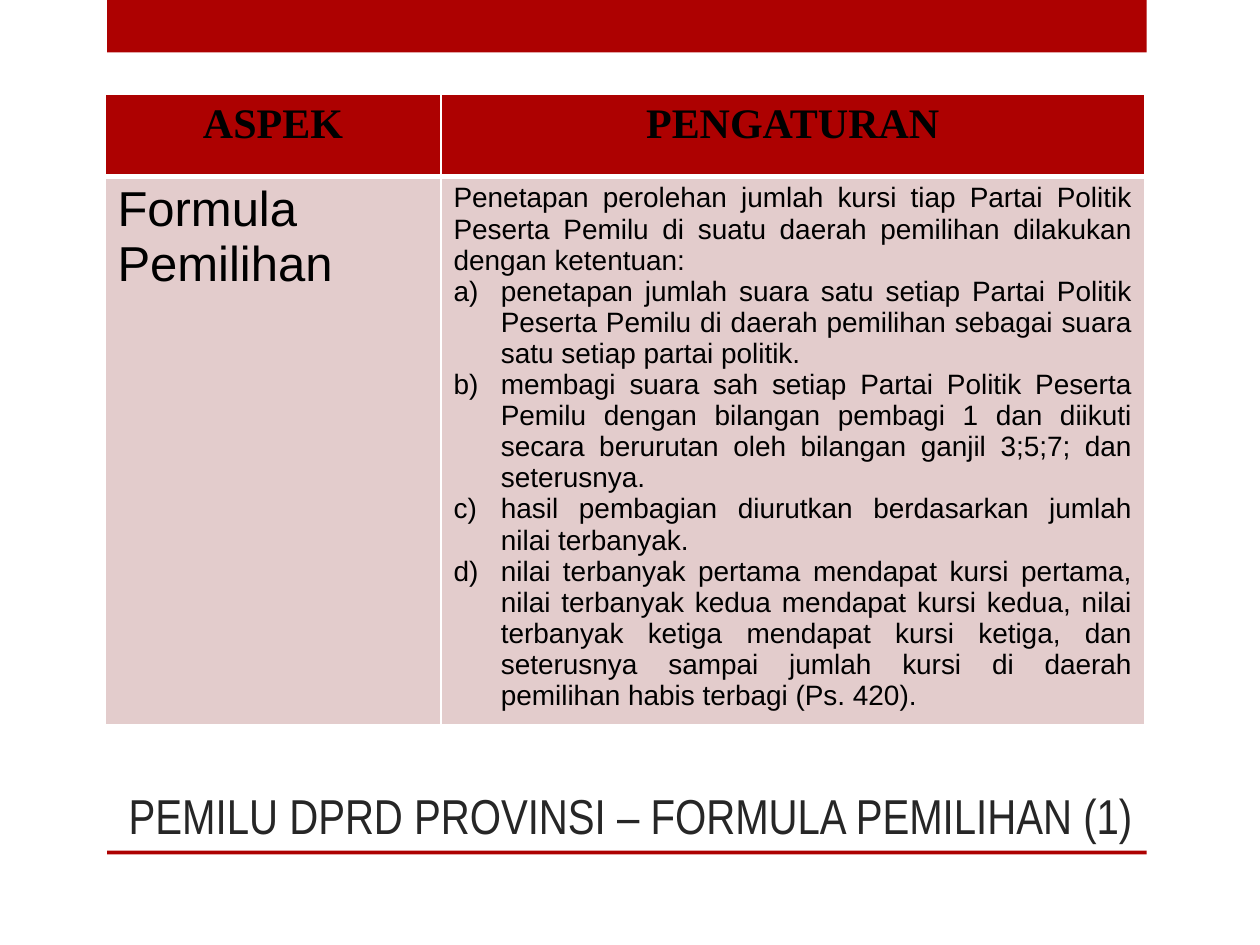
from dataclasses import dataclass

from pptx import Presentation
from pptx.dml.color import RGBColor as RGB
from pptx.enum.shapes import MSO_SHAPE as SHAPE
from pptx.enum.text import MSO_ANCHOR as ANCHOR, MSO_AUTO_SIZE as AUTOSIZE, PP_ALIGN as ALIGN
from pptx.oxml.xmlchemy import OxmlElement as Element
from pptx.util import Pt


@dataclass(frozen=True)
class Theme:
    red: str = "AD0101"
    pink: str = "E3CCCC"
    white: str = "FFFFFF"
    black: str = "000000"
    dark: str = "262626"
    title_size: int = 28
    header_size: int = 24
    aspect_size: int = 28
    body_size: int = 16
    title_font: str = "Arial Narrow"
    header_font: str = "Times New Roman"
    body_font: str = "Arial"


theme = Theme()


def write(p, text, size, font=theme.body_font, color=theme.black,
          bold=False, align=ALIGN.LEFT, bullet=None, indent=27):
    """Fill a paragraph with one formatted run, numbered if bullet is set."""
    p.alignment = align
    r = p.add_run()
    r.text = text
    r.font.size, r.font.name, r.font.bold = Pt(size), font, bold
    r.font.color.rgb = RGB.from_string(color)
    if bullet:
        pPr = p._p.get_or_add_pPr()
        pPr.set("marL", str(Pt(indent)))
        pPr.set("indent", str(-Pt(indent)))
        number = Element("a:buAutoNum")
        number.set("type", bullet)
        pPr.append(number)


def style_cell(cell, fill, borders):
    """Set the cell's fill and its white borders, given as side: width."""
    cell.fill.solid()
    cell.fill.fore_color.rgb = RGB.from_string(fill)
    tcPr = cell._tc.get_or_add_tcPr()
    for i, (side, width) in enumerate(borders.items()):
        ln, solid, clr = Element(f"a:ln{side}"), Element("a:solidFill"), Element("a:srgbClr")
        ln.set("w", str(Pt(width)))
        clr.set("val", theme.white)
        solid.append(clr)
        ln.append(solid)
        tcPr.insert(i, ln)


prs = Presentation()
prs.slide_width, prs.slide_height = Pt(720), Pt(540)
s = prs.slides.add_slide(prs.slide_layouts[5])

# Top band and rule below the title
for top, height in ((0, 30), (486, 2.3)):
    sp = s.shapes.add_shape(SHAPE.RECTANGLE, Pt(61.2), Pt(top), Pt(594), Pt(height))
    sp.shadow.inherit = False
    sp.fill.solid()
    sp.fill.fore_color.rgb = RGB.from_string(theme.red)
    sp.line.fill.background()

# Title
title = s.shapes.title
title.left, title.top, title.width, title.height = Pt(60), Pt(360), Pt(594), Pt(126)
tf = title.text_frame
tf.word_wrap = True
tf.auto_size = AUTOSIZE.NONE
tf.vertical_anchor = ANCHOR.BOTTOM
write(tf.paragraphs[0], "PEMILU DPRD PROVINSI – FORMULA PEMILIHAN (1)", theme.title_size,
      font=theme.title_font, color=theme.dark, align=ALIGN.RIGHT)

# Table grid
table = s.shapes.add_table(2, 2, Pt(60), Pt(54), Pt(594), Pt(360)).table
for column, width in zip(table.columns, (192, 402)):
    column.width = Pt(width)
for row, height, fill, borders in zip(
        table.rows, (46.8, 313.2), (theme.red, theme.pink),
        ({"L": 1, "R": 1, "T": 1, "B": 3}, {"L": 1, "R": 1, "T": 3, "B": 1})):
    row.height = Pt(height)
    for cell in row.cells:
        style_cell(cell, fill, borders)

# Header row
for col, text in enumerate(("ASPEK", "PENGATURAN")):
    write(table.cell(0, col).text_frame.paragraphs[0], text, theme.header_size,
          font=theme.header_font, bold=True, align=ALIGN.CENTER)

# Aspect and its rules
write(table.cell(1, 0).text_frame.paragraphs[0], "Formula Pemilihan", theme.aspect_size)
intro = ("Penetapan perolehan jumlah kursi tiap Partai Politik Peserta Pemilu "
         "di suatu daerah pemilihan dilakukan dengan ketentuan:")
rules = (
    "penetapan jumlah suara satu setiap Partai Politik Peserta Pemilu di daerah "
    "pemilihan sebagai suara satu setiap partai politik.",
    "membagi suara sah setiap Partai Politik Peserta Pemilu dengan bilangan pembagi 1 "
    "dan diikuti secara berurutan oleh bilangan ganjil 3;5;7; dan seterusnya.",
    "hasil pembagian diurutkan berdasarkan jumlah nilai terbanyak.",
    "nilai terbanyak pertama mendapat kursi pertama, nilai terbanyak kedua mendapat "
    "kursi kedua, nilai terbanyak ketiga mendapat kursi ketiga, dan seterusnya sampai "
    "jumlah kursi di daerah pemilihan habis terbagi (Ps. 420).",
)
tf = table.cell(1, 1).text_frame
write(tf.paragraphs[0], intro, theme.body_size, align=ALIGN.JUSTIFY)
for rule in rules:
    write(tf.add_paragraph(), rule, theme.body_size, align=ALIGN.JUSTIFY,
          bullet="alphaLcParenR")

prs.save("out.pptx")
